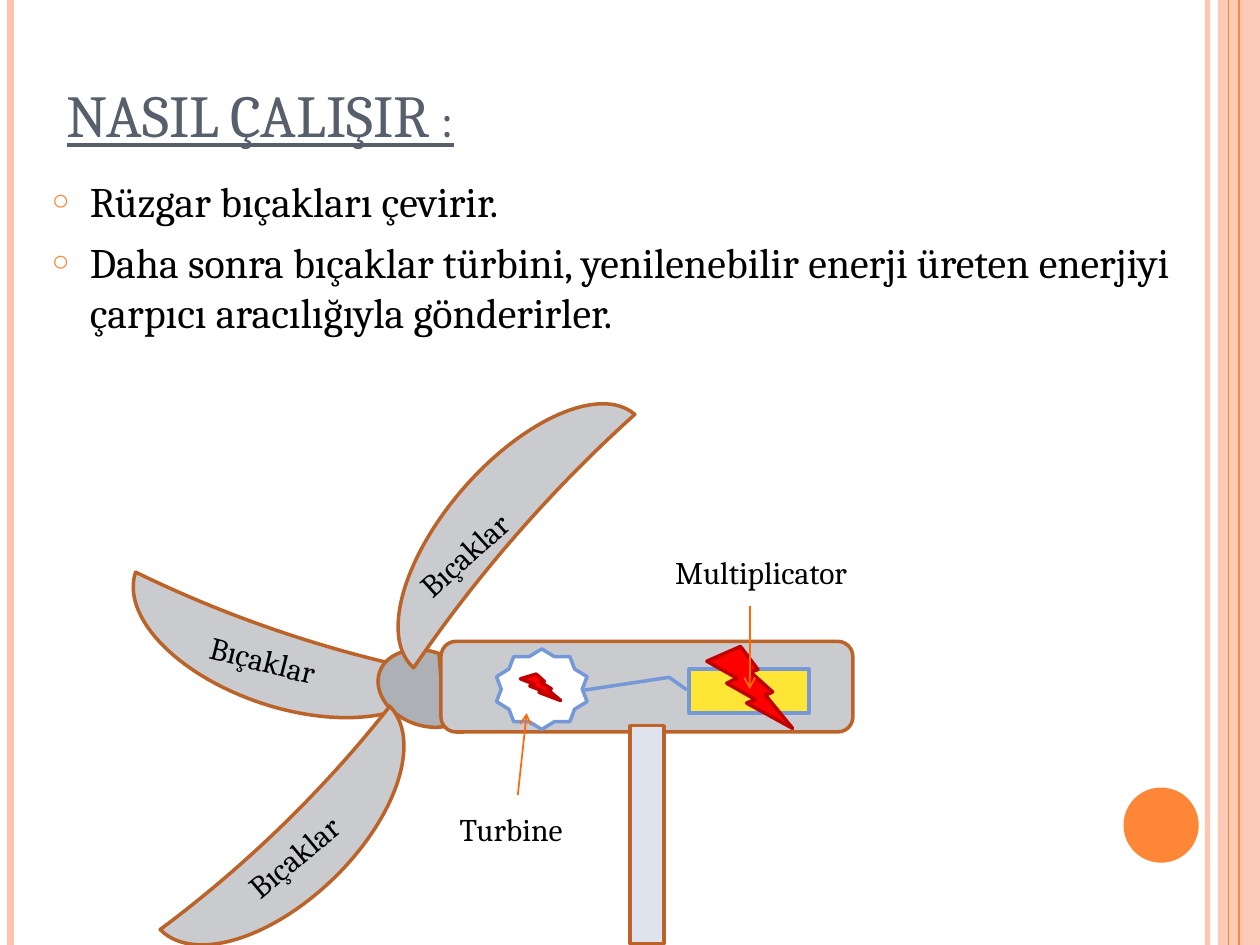
"""Build the slide that explains how a wind turbine works."""
import pptx
import pptx.util
import pptx.dml.color
import pptx.enum.shapes
import pptx.enum.text
import pptx.oxml
import pptx.oxml.ns

Pt = pptx.util.Pt
RGB = pptx.dml.color.RGBColor.from_string
KIND = pptx.enum.shapes.MSO_SHAPE
STRAIGHT = pptx.enum.shapes.MSO_CONNECTOR.STRAIGHT
ANCHOR = pptx.enum.text.MSO_ANCHOR
COLORS = {
    "peach": "FEC3AE", "orange": "FE8637", "arrow": "FF6B0A",
    "slate": "575F6D", "black": "000000", "white": "FFFFFF",
    "blade": "C9CBCE", "hub": "ADB0B5", "brown": "BC6329",
    "yellow": "FFE636", "blue": "7598D9", "tower": "DFE3EE",
    "red": "FF0000", "crimson": "C00000",
}


def write(para, text, size=18, color="black", underline=None, caps=None):
    """Add a formatted run to a paragraph."""
    span = para.add_run()
    span.text = text
    span.font.name = "Cambria"
    span.font.size = Pt(size)
    span.font.underline = underline
    span.font.color.rgb = RGB(COLORS[color])
    if caps:
        span.font._element.set("cap", caps)


def add_xml(parent, tag, **attributes):
    """Append a DrawingML element with the given attributes."""
    child = pptx.oxml.parse_xml(f"<a:{tag} {pptx.oxml.ns.nsdecls('a')}/>")
    for name, value in attributes.items():
        child.set(name, value)
    parent.append(child)
    return child


deck = pptx.Presentation()
deck.slide_width, deck.slide_height = Pt(720), Pt(540)
page = deck.slides.add_slide(deck.slide_layouts[1])

title, body = page.placeholders
for box, frame in ((title, (31, 43, 588, 46)), (body, (22.5, 96.5, 675, 395))):
    box.left, box.top, box.width, box.height = map(Pt, frame)
    box.text_frame.auto_size = pptx.enum.text.MSO_AUTO_SIZE.NONE
title.text_frame.vertical_anchor = ANCHOR.BOTTOM
para = title.text_frame.paragraphs[0]
para.alignment = pptx.enum.text.PP_ALIGN.LEFT
write(para, "NASIL ÇALIŞIR :", size=34, color="slate", underline=True, caps="small")

points = [
    "Rüzgar bıçakları çevirir.",
    "Daha sonra bıçaklar türbini, yenilenebilir enerji üreten enerjiyi "
    "çarpıcı aracılığıyla gönderirler.",
]
for index, text in enumerate(points):
    para = body.text_frame.add_paragraph() if index else body.text_frame.paragraphs[0]
    para.space_before = Pt(6)
    write(para, text, size=24)
    settings = para._p.get_or_add_pPr()
    settings.set("marL", str(Pt(21.6)))
    settings.set("indent", str(-Pt(21.6)))
    add_xml(add_xml(settings, "buClr"), "srgbClr", val=COLORS["orange"])
    add_xml(settings, "buSzPct", val="70000")
    add_xml(settings, "buChar", char="○")

border_lines = [
    (690, 0, 690, 540, "peach", 3, 93, False),
    (6, 0, 6, 540, "peach", 4.5, 100, False),
    (708, 0, 708, 540, "orange", 1.5, 100, False),
    (702, 0, 702, 540, "orange", 0.75, 100, False),
]
arrows = [
    (295.9, 454.3, 301, 407.5, "arrow", 1, 100, True),
    (428.4, 346.3, 428.4, 393.8, "arrow", 1, 100, True),
]
callout = [0.472, -0.02, 0.188, -0.167, 0.479, -0.875]
shapes = [
    (KIND.RECTANGLE, (696, 0, 24, 540), 0, "peach", None, [], 87),
    (KIND.OVAL, (642, 450, 43, 43), 0, "orange", None, [], 100),
    (KIND.MOON, (132.5, 287.3, 48.2, 183), 288.5, "blade", "brown", [0.875], 100),
    (KIND.CHORD, (215.3, 372.2, 57, 42.5), 19.5, "hub", "brown", [], 100),
    (KIND.MOON, (259.2, 198, 46, 192.2), 41.1, "blade", "brown", [0.875], 100),
    (KIND.FLOWCHART_ALTERNATE_PROCESS, (252, 366.5, 235.4, 51.8), 0, "blade", "brown", [], 100),
    (KIND.LINE_CALLOUT_2, (393.8, 382.3, 68.4, 25.2), 0, "yellow", "blue", callout, 100),
    (KIND.STAR_10_POINT, (283.7, 370.8, 51.8, 46), 0, "white", "blue", [], 100),
    (KIND.LIGHTNING_BOLT, (297.4, 385.2, 23, 15.1), 0, "red", "crimson", [], 100),
    (KIND.LIGHTNING_BOLT, (403.9, 369.4, 49, 46.8), 0, "red", "crimson", [], 100),
    (KIND.RECTANGLE, (360, 414.7, 19.4, 124.6), 0, "tower", "brown", [], 100),
    (KIND.MOON, (149.8, 393.1, 48.2, 183), 225.8, "blade", "brown", [0.875], 100),
]

for kind, frame, angle, fill, outline, adjustments, opacity in shapes:
    shape = page.shapes.add_shape(kind, *map(Pt, frame))
    shape.shadow.inherit = False
    shape.rotation = angle
    for index, value in enumerate(adjustments):
        shape.adjustments[index] = value
    shape.fill.solid()
    shape.fill.fore_color.rgb = RGB(COLORS[fill])
    if opacity < 100:
        tint = shape._element.spPr.find(".//" + pptx.oxml.ns.qn("a:srgbClr"))
        add_xml(tint, "alpha", val=str(opacity * 1000))
    if outline:
        shape.line.color.rgb = RGB(COLORS[outline])
        shape.line.width = Pt(2)
    else:
        shape.line.fill.background()

for *ends, color, width, opacity, pointed in border_lines + arrows:
    line = page.shapes.add_connector(STRAIGHT, *map(Pt, ends))
    line.line.color.rgb = RGB(COLORS[color])
    line.line.width = Pt(width)
    if opacity < 100:
        tint = line._element.spPr.find(".//" + pptx.oxml.ns.qn("a:srgbClr"))
        add_xml(tint, "alpha", val=str(opacity * 1000))
    if pointed:
        add_xml(line.line._get_or_add_ln(), "tailEnd", type="arrow")
    add_xml(line._element.spPr, "effectLst")

labels = [
    ("Turbine", (255.6, 459.4, 93, 26.6), 0),
    ("Multiplicator", (378.7, 312.5, 125.3, 28.8), 0),
    ("Bıçaklar", (112.3, 364.3, 90.7, 28.8), 14.3),
    ("Bıçaklar", (225.4, 297.4, 90.7, 28.8), 317.8),
    ("Bıçaklar", (128.2, 470.2, 90.7, 28.8), 320.1),
]
for text, frame, angle in labels:
    box = page.shapes.add_textbox(*map(Pt, frame))
    box.rotation = angle
    box.text_frame.word_wrap = True
    write(box.text_frame.paragraphs[0], text)

deck.save("out.pptx")
